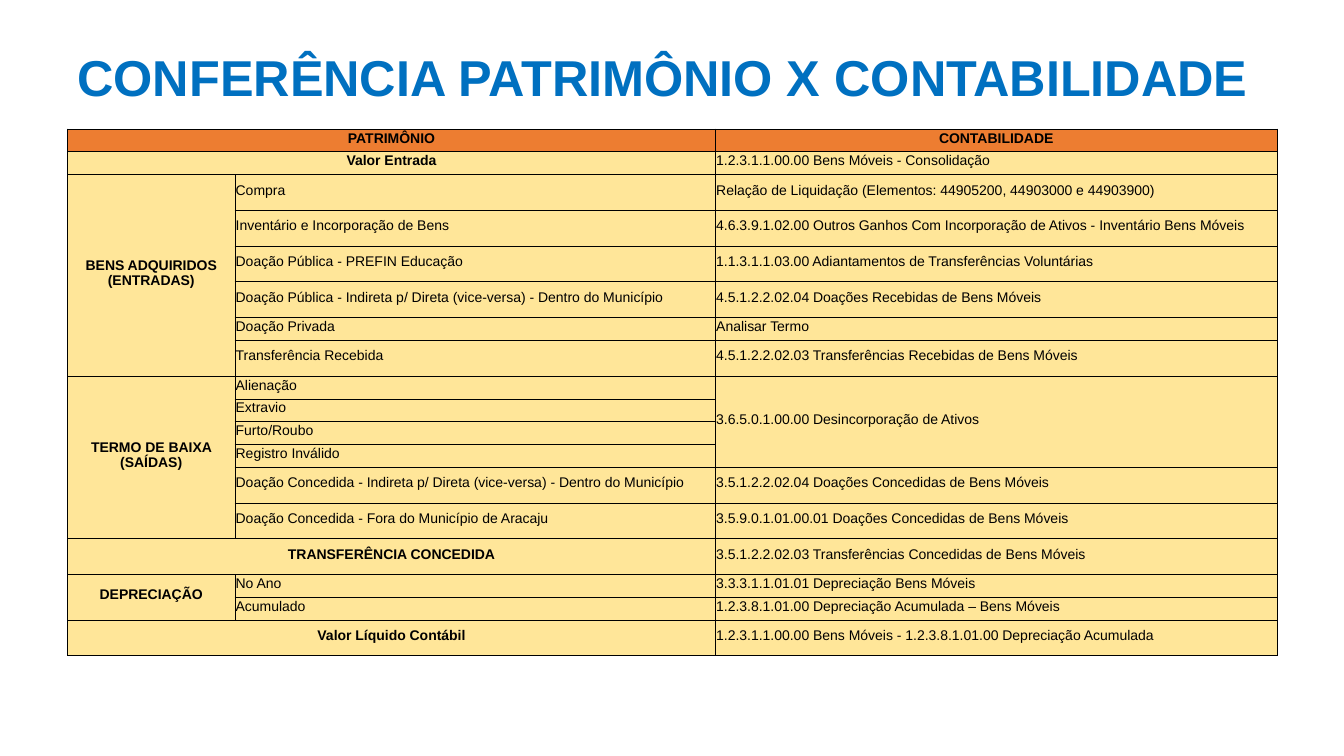
"""Build the slide that matches asset records with accounting codes."""
from dataclasses import dataclass

from lxml.etree import SubElement
from pptx import Presentation
from pptx.dml.color import RGBColor
from pptx.enum.text import MSO_ANCHOR, PP_ALIGN
from pptx.oxml.ns import qn
from pptx.util import Cm, Pt

SHORT, TALL = Cm(0.56), Cm(0.9)
TITLE = "CONFERÊNCIA PATRIMÔNIO X CONTABILIDADE"
# None in the group or account column continues the cell above;
# None in the item column widens the group cell.
ROWS = [
    (SHORT, "PATRIMÔNIO", None, "CONTABILIDADE"),
    (SHORT, "Valor Entrada", None, "1.2.3.1.1.00.00 Bens Móveis - Consolidação"),
    (TALL, "BENS ADQUIRIDOS (ENTRADAS)", "Compra",
     "Relação de Liquidação (Elementos: 44905200, 44903000 e 44903900)"),
    (TALL, None, "Inventário e Incorporação de Bens",
     "4.6.3.9.1.02.00 Outros Ganhos Com Incorporação de Ativos - Inventário Bens Móveis"),
    (TALL, None, "Doação Pública - PREFIN Educação",
     "1.1.3.1.1.03.00 Adiantamentos de Transferências Voluntárias"),
    (TALL, None, "Doação Pública - Indireta p/ Direta (vice-versa) - Dentro do Município",
     "4.5.1.2.2.02.04 Doações Recebidas de Bens Móveis"),
    (SHORT, None, "Doação Privada", "Analisar Termo"),
    (TALL, None, "Transferência Recebida",
     "4.5.1.2.2.02.03 Transferências Recebidas de Bens Móveis"),
    (SHORT, "TERMO DE BAIXA (SAÍDAS)", "Alienação",
     "3.6.5.0.1.00.00 Desincorporação de Ativos"),
    (SHORT, None, "Extravio", None),
    (SHORT, None, "Furto/Roubo", None),
    (SHORT, None, "Registro Inválido", None),
    (TALL, None, "Doação Concedida - Indireta p/ Direta (vice-versa) - Dentro do Município",
     "3.5.1.2.2.02.04 Doações Concedidas de Bens Móveis"),
    (TALL, None, "Doação Concedida - Fora do Município de Aracaju",
     "3.5.9.0.1.01.00.01 Doações Concedidas de Bens Móveis"),
    (TALL, "TRANSFERÊNCIA CONCEDIDA", None,
     "3.5.1.2.2.02.03 Transferências Concedidas de Bens Móveis"),
    (SHORT, "DEPRECIAÇÃO", "No Ano", "3.3.3.1.1.01.01 Depreciação Bens Móveis"),
    (SHORT, None, "Acumulado", "1.2.3.8.1.01.00 Depreciação Acumulada – Bens Móveis"),
    (TALL, "Valor Líquido Contábil", None,
     "1.2.3.1.1.00.00 Bens Móveis - 1.2.3.8.1.01.00 Depreciação Acumulada"),
]
COLUMN_WIDTHS = [Cm(4.22), Cm(12.11), Cm(14.15)]
LEFT, TABLE_TOP = Cm(1.7), Cm(3.25)


@dataclass(frozen=True)
class Theme:
    """Colours and type sizes."""
    font: str = "Arial"
    title: str = "0070C0"
    text: str = "000000"
    header: str = "ED7D31"
    body: str = "FFE699"
    border: str = "000000"
    title_size: int = 36
    cell_size: int = 10
    border_width: float = 0.5


THEME = Theme()


def format_paragraph(paragraph, size, color, bold, alignment):
    """Apply type and alignment to a paragraph."""
    paragraph.alignment = alignment
    for run in paragraph.runs:
        run.font.name = THEME.font
        run.font.size = Pt(size)
        run.font.bold = bold
        run.font.color.rgb = RGBColor.from_string(color)


def style_cell(cell, fill):
    """Give a cell its borders, margins and fill."""
    properties = cell._tc.get_or_add_tcPr()
    for side in ("a:lnL", "a:lnR", "a:lnT", "a:lnB"):
        line = SubElement(properties, qn(side), w=str(Pt(THEME.border_width)))
        solid = SubElement(line, qn("a:solidFill"))
        SubElement(solid, qn("a:srgbClr"), val=THEME.border)
    cell.margin_left = cell.margin_right = cell.margin_top = Cm(0.02)
    cell.margin_bottom = Cm(0.13)
    cell.vertical_anchor = MSO_ANCHOR.MIDDLE
    cell.fill.solid()
    cell.fill.fore_color.rgb = RGBColor.from_string(fill)


def add_title(slide):
    """Add the heading."""
    box = slide.shapes.add_textbox(LEFT, Cm(1.12), sum(COLUMN_WIDTHS), Cm(1.63))
    frame = box.text_frame
    frame.word_wrap = True
    frame.vertical_anchor = MSO_ANCHOR.MIDDLE
    frame.text = TITLE
    format_paragraph(frame.paragraphs[0], THEME.title_size, THEME.title, True, PP_ALIGN.LEFT)


def add_accounts_table(slide):
    """Add the table and merge the cells that continue."""
    heights = [row[0] for row in ROWS]
    table = slide.shapes.add_table(
        len(ROWS), len(COLUMN_WIDTHS), LEFT, TABLE_TOP, sum(COLUMN_WIDTHS), sum(heights)).table
    table.first_row = table.horz_banding = False
    for column, width in zip(table.columns, COLUMN_WIDTHS):
        column.width = width
    for row_index, (height, *texts) in enumerate(ROWS):
        table.rows[row_index].height = height
        for column_index, text in enumerate(texts):
            cell = table.cell(row_index, column_index)
            style_cell(cell, THEME.body if row_index else THEME.header)
            if text is None:
                continue
            cell.text_frame.text = text
            heading = row_index == 0 or column_index == 0
            format_paragraph(cell.text_frame.paragraphs[0], THEME.cell_size, THEME.text,
                             heading, PP_ALIGN.CENTER if heading else PP_ALIGN.LEFT)
            last_row, last_column = row_index, column_index
            if column_index == 0 and texts[1] is None:
                last_column = 1
            elif column_index != 1:
                while last_row + 1 < len(ROWS) and ROWS[last_row + 1][column_index + 1] is None:
                    last_row += 1
            if (last_row, last_column) != (row_index, column_index):
                cell.merge(table.cell(last_row, last_column))


def main():
    """Create and save the presentation."""
    presentation = Presentation()
    presentation.slide_width, presentation.slide_height = Cm(33.87), Cm(19.05)
    slide = presentation.slides.add_slide(presentation.slide_layouts[6])
    add_title(slide)
    add_accounts_table(slide)
    presentation.save("out.pptx")


if __name__ == "__main__":
    main()
